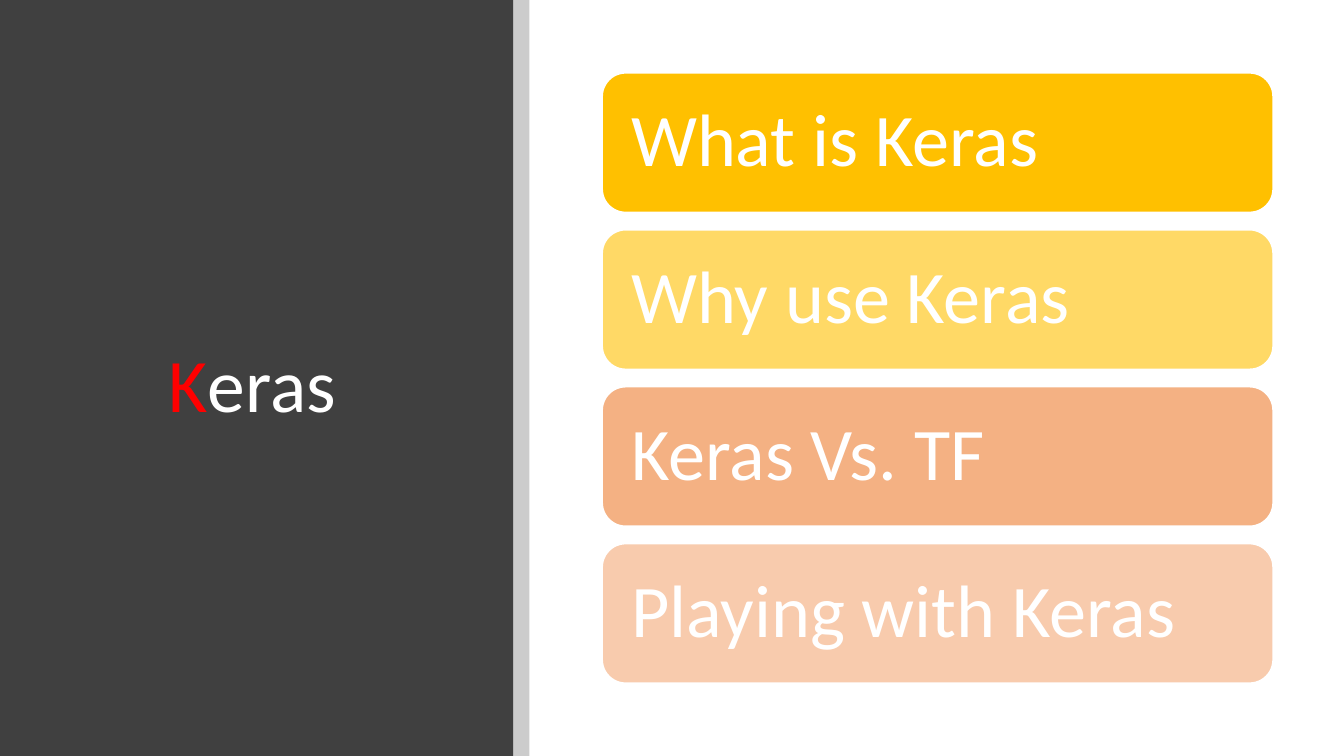
from pptx import Presentation
from pptx.dml.color import RGBColor
from pptx.enum import shapes, text
from pptx.oxml.ns import qn
from pptx.util import Inches, Pt
from lxml import etree

FONT = "Calibri"
COLORS = {
    "panel": "404040",
    "divider": "000000",
    "white": "FFFFFF",
    "accent": "FF0000",
}
TOPICS = [
    ("What is Keras", "FFC000"),
    ("Why use Keras", "FFD966"),
    ("Keras Vs. TF", "F4B183"),
    ("Playing with Keras", "F8CBAD"),
]


def add_block(slide, kind, box, fill):
    """Add a plain filled shape; box is left, top, width, height in inches."""
    shape = slide.shapes.add_shape(kind, *map(Inches, box))
    shape.shadow.inherit = False
    shape.fill.solid()
    shape.fill.fore_color.rgb = RGBColor.from_string(fill)
    shape.line.fill.background()
    return shape


def set_frame(text_frame, left, margin):
    text_frame.word_wrap = True
    text_frame.vertical_anchor = text.MSO_ANCHOR.MIDDLE
    text_frame.margin_left = Inches(left)
    text_frame.margin_right = Inches(margin)
    text_frame.margin_top = text_frame.margin_bottom = Inches(margin)
    paragraph = text_frame.paragraphs[0]
    paragraph.alignment = text.PP_ALIGN.LEFT
    paragraph.line_spacing = 0.9
    return paragraph


def format_run(run, size, color):
    run.font.name = FONT
    run.font.size = Pt(size)
    run.font.color.rgb = RGBColor.from_string(color)


def add_title_panel(slide, left, top, width, height):
    # Dark panel
    rectangle = shapes.MSO_SHAPE.RECTANGLE
    add_block(slide, rectangle, (left, top, width, height), COLORS["panel"])

    # Translucent divider along the right edge
    divider = add_block(slide, rectangle, (left + width, top, 0.16, height),
                        COLORS["divider"])
    color = divider.fill._xPr.find(qn("a:solidFill"))[0]
    etree.SubElement(color, qn("a:alpha"), val="20000")

    # Title with a red initial
    title = slide.shapes.add_textbox(Inches(left + 0.72), Inches(top + 0.89),
                                     Inches(3.65), Inches(5.91))
    paragraph = set_frame(title.text_frame, left=0.95, margin=0.05)
    for part, part_color in (("K", "accent"), ("eras", "white")):
        run = paragraph.add_run()
        run.text = part
        format_run(run, 54, COLORS[part_color])


def add_topic_list(slide, left, top, width, height):
    card_height = 1.39
    step = (height - card_height) / (len(TOPICS) - 1)
    for index, (topic, fill) in enumerate(TOPICS):
        box = (left, top + index * step, width, card_height)
        card = add_block(slide, shapes.MSO_SHAPE.ROUNDED_RECTANGLE, box, fill)
        card.adjustments[0] = 0.17
        card.line.color.rgb = RGBColor.from_string(COLORS["white"])
        card.line.width = Pt(1.5)
        # The corner radius adds its own inset to the text area
        paragraph = set_frame(card.text_frame, left=0.22, margin=0.22)
        paragraph.text = topic
        format_run(paragraph.runs[0], 53, COLORS["white"])


def main():
    presentation = Presentation()
    presentation.slide_width = Inches(13.33)
    presentation.slide_height = Inches(7.5)
    slide = presentation.slides.add_slide(presentation.slide_layouts[6])
    add_title_panel(slide, 0, 0, 5.09, 7.5)
    add_topic_list(slide, 5.97, 0.72, 6.66, 6.06)
    presentation.save("out.pptx")


if __name__ == "__main__":
    main()
